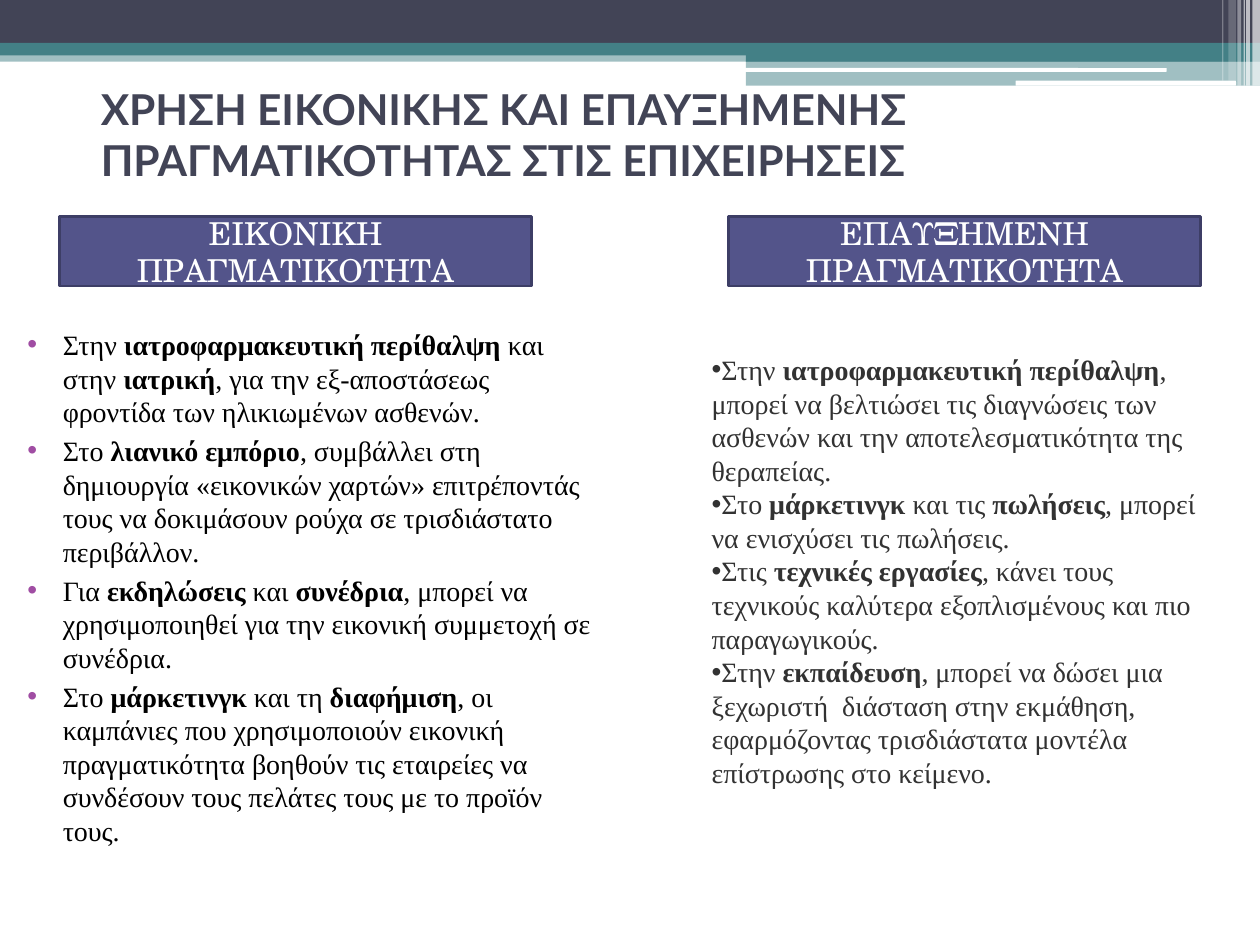
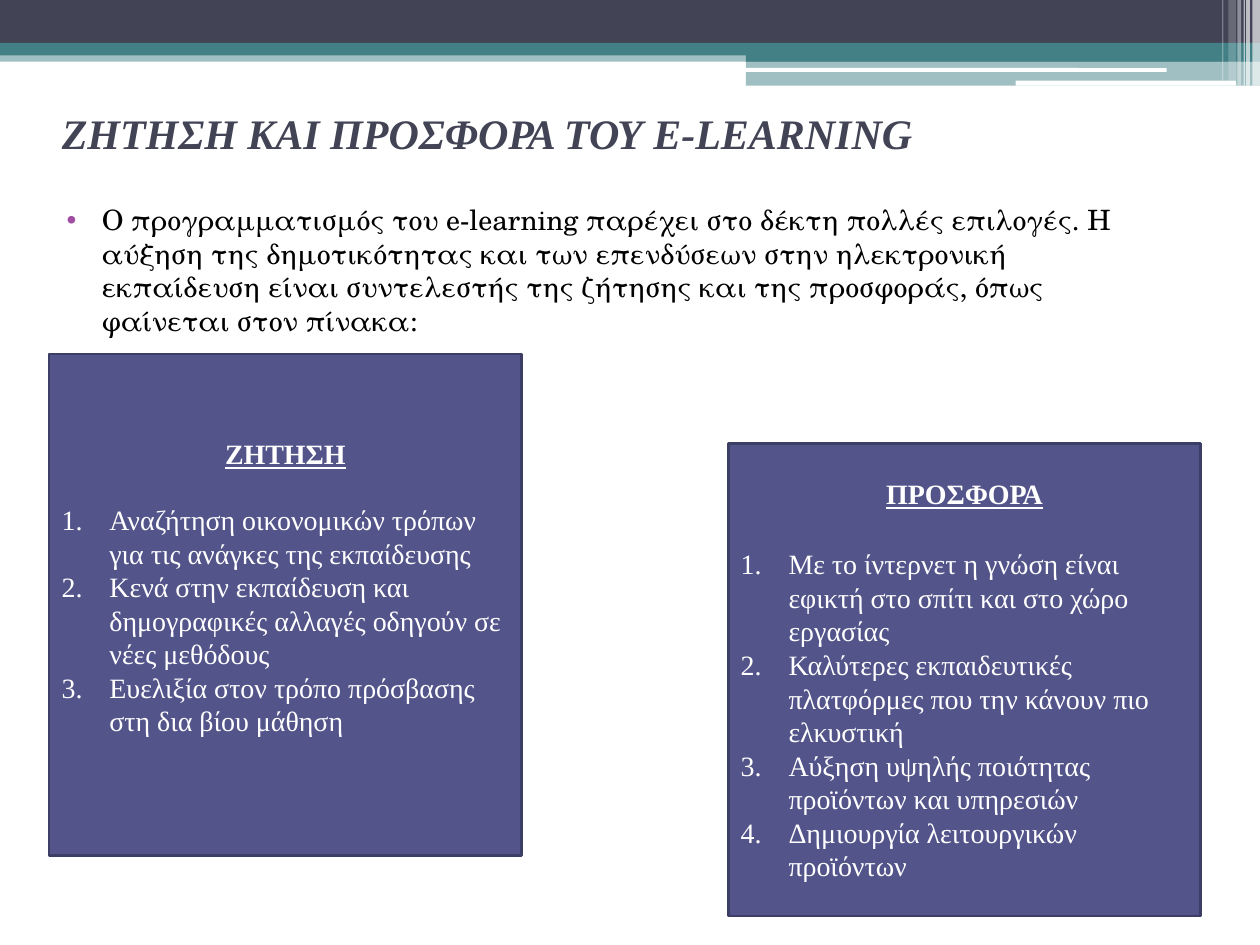
from lxml import etree
from pptx import Presentation
from pptx.dml.color import RGBColor
from pptx.enum.shapes import MSO_SHAPE
from pptx.enum.text import MSO_ANCHOR, MSO_AUTO_SIZE, PP_ALIGN
from pptx.oxml.ns import qn
from pptx.util import Inches, Pt

RECT, ROUND = MSO_SHAPE.RECTANGLE, MSO_SHAPE.ROUNDED_RECTANGLE
LEFT, CENTER = PP_ALIGN.LEFT, PP_ALIGN.CENTER
TOP, MIDDLE = MSO_ANCHOR.TOP, MSO_ANCHOR.MIDDLE

SERIF, SCHOLA, SANS = "Times New Roman", "TeX Gyre Schola", "Lato"
NAVY, TEAL, WHITE, BLACK = "424456", "438086", "FFFFFF", "000000"
PANEL, PANEL_EDGE, BULLET, GREY = "53548A", "3D3E66", "A04DA3", "323232"

# Header shared by both slides: left, top, width, height, colour, opacity %
BANDS = [
    (0, 0.4, 10, 0.09, TEAL, 50),
    (0, 0, 10, 0.34, NAVY, 100),
    (0, 0.34, 10, 0.1, TEAL, 100),
    (5.92, 0.39, 4.08, 0.1, TEAL, 100),
    (5.92, 0.48, 4.08, 0.2, TEAL, 50),
]
WHITE_RULES = [(5.91, 0.54, 3.35, 0.03), (8.06, 0.64, 1.75, 0.04)]
# Vertical stripes at the right end: left, width, height, opacity %
STRIPES = [
    (9.94, 0.06, 0.68, 65), (9.89, 0.03, 0.68, 65), (9.87, 0.01, 0.68, 60),
    (9.82, 0.03, 0.68, 40), (9.75, 0.06, 0.64, 20), (9.7, 0.01, 0.64, 30),
]

# Content: *bold*, ~ is a space that does not break
USES_TITLE = "ΧΡΗΣΗ ΕΙΚΟΝΙΚΗΣ ΚΑΙ ΕΠΑΥΞΗΜΕΝΗΣ ΠΡΑΓΜΑΤΙΚΟΤΗΤΑΣ ΣΤΙΣ ΕΠΙΧΕΙΡΗΣΕΙΣ"
USES_HEADINGS = ["ΕΙΚΟΝΙΚΗ ΠΡΑΓΜΑΤΙΚΟΤΗΤΑ", "ΕΠΑΥΞΗΜΕΝΗ ΠΡΑΓΜΑΤΙΚΟΤΗΤΑ"]
VIRTUAL_USES = [
    "Στην~*ιατροφαρμακευτική~περίθαλψη*~και στην~*ιατρική*, για την "
    "εξ-αποστάσεως φροντίδα των ηλικιωμένων ασθενών.",
    "Στο~*λιανικό~εμπόριο*, συμβάλλει στη δημιουργία «εικονικών χαρτών» "
    "επιτρέποντάς τους να δοκιμάσουν ρούχα σε τρισδιάστατο περιβάλλον.",
    "Για~*εκδηλώσεις*~και~*συνέδρια*, μπορεί να χρησιμοποιηθεί για την "
    "εικονική συμμετοχή σε συνέδρια.",
    "Στο*~μάρκετινγκ*~και τη*~διαφήμιση*, οι καμπάνιες που χρησιμοποιούν "
    "εικονική πραγματικότητα βοηθούν τις εταιρείες να συνδέσουν τους πελάτες "
    "τους με το προϊόν τους.",
]
AUGMENTED_USES = [
    "Στην *ιατροφαρμακευτική~περίθαλψη*, μπορεί να βελτιώσει τις διαγνώσεις "
    "των ασθενών και την αποτελεσματικότητα της θεραπείας.",
    "Στο*~μάρκετινγκ*~και τις*~πωλήσεις*, μπορεί να ενισχύσει τις πωλήσεις.",
    "Στις~*τεχνικές εργασίες*, κάνει τους τεχνικούς καλύτερα εξοπλισμένους "
    "και πιο παραγωγικούς.",
    "Στην*~εκπαίδευση*, μπορεί να δώσει μια ξεχωριστή  διάσταση στην "
    "εκμάθηση, εφαρμόζοντας τρισδιάστατα μοντέλα επίστρωσης στο κείμενο.",
]
MARKET_TITLE = "ΖΗΤΗΣΗ ΚΑΙ ΠΡΟΣΦΟΡΑ ΤΟΥ E-LEARNING"
MARKET_INTRO = (
    "Ο προγραμματισμός του e-learning παρέχει στο δέκτη πολλές επιλογές. Η "
    "αύξηση της δημοτικότητας και των επενδύσεων στην ηλεκτρονική εκπαίδευση "
    "είναι συντελεστής της ζήτησης και της προσφοράς, όπως φαίνεται στον πίνακα:")
# Panels: place, heading, gap after heading (points), bottom inset, numbered items
MARKET_PANELS = [
    ((0.39, 2.81, 3.75, 3.98), "ΖΗΤΗΣΗ", 18.4, 0.33, [
        "Αναζήτηση οικονομικών τρόπων για τις ανάγκες της εκπαίδευσης",
        "Κενά στην εκπαίδευση και δημογραφικές αλλαγές οδηγούν σε νέες μεθόδους",
        "Ευελιξία στον τρόπο πρόσβασης στη δια βίου μάθηση"]),
    ((5.78, 3.52, 3.75, 3.75), "ΠΡΟΣΦΟΡΑ", 20.7, 0.05, [
        "Με το ίντερνετ η γνώση είναι εφικτή στο σπίτι και στο χώρο εργασίας",
        "Καλύτερες εκπαιδευτικές πλατφόρμες που την κάνουν πιο ελκυστική",
        "Αύξηση υψηλής ποιότητας προϊόντων και υπηρεσιών",
        "Δημιουργία λειτουργικών προϊόντων"]),
]


def rgb(color):
    return RGBColor.from_string(color)


def place(box, at):
    box.left, box.top, box.width, box.height = map(Inches, at)


def block(slide, at, color, kind=RECT, opacity=100, edge=None):
    shape = slide.shapes.add_shape(kind, *map(Inches, at))
    shape.shadow.inherit = False
    shape.fill.solid()
    shape.fill.fore_color.rgb = rgb(color)
    if opacity < 100:
        fill = shape.fill._xPr.find(qn("a:solidFill"))
        etree.SubElement(fill[0], qn("a:alpha"), val=str(opacity * 1000))
    if edge:
        shape.line.color.rgb = rgb(edge)
        shape.line.width = Pt(1.5)
    else:
        shape.line.fill.background()
    return shape


def mark(paragraph, bullet=None, number=False, indent=0, bullet_color=None):
    props = paragraph._p.get_or_add_pPr()
    props.set("marL", str(Inches(indent[0]) if indent else 0))
    props.set("indent", str(Inches(indent[1]) if indent else 0))
    if bullet_color:
        color = etree.SubElement(props, qn("a:buClr"))
        etree.SubElement(color, qn("a:srgbClr"), val=bullet_color)
    if number:
        etree.SubElement(props, qn("a:buFont"), typeface="+mj-lt")
        etree.SubElement(props, qn("a:buAutoNum"), type="arabicPeriod")
    elif bullet:
        etree.SubElement(props, qn("a:buFont"), typeface="Arial")
        etree.SubElement(props, qn("a:buChar"), char=bullet)


def write(box, text, size=16, font=SERIF, color=BLACK, bold=False, italic=False,
          underline=False, align=LEFT, anchor=MIDDLE, before=0, after=0, **marks):
    """Add one paragraph to the box; *...* switches bold."""
    frame = box.text_frame
    frame.word_wrap = True
    frame.auto_size = MSO_AUTO_SIZE.NONE
    frame.vertical_anchor = anchor
    paragraph = frame.add_paragraph() if frame.text else frame.paragraphs[0]
    paragraph.alignment = align
    paragraph.space_before, paragraph.space_after = Pt(before), Pt(after)
    if marks:
        mark(paragraph, **marks)
    for position, part in enumerate(text.replace("~", "\u00a0").split("*")):
        if part:
            run = paragraph.add_run()
            run.text = part
            style = run.font
            style.name, style.size, style.color.rgb = font, Pt(size), rgb(color)
            style.bold = bold or position % 2 == 1
            style.italic, style.underline = italic, underline


def text_box(slide, at):
    return slide.shapes.add_textbox(*map(Inches, at))


def add_header(layout, slide):
    """Draw the header once and hand it to the layout, behind its placeholders."""
    parts = [block(slide, at, color, opacity=opacity)
             for *at, color, opacity in BANDS]
    parts += [block(slide, at, WHITE, ROUND) for at in WHITE_RULES]
    parts += [block(slide, (left, 0, width, height), WHITE, opacity=opacity)
              for left, width, height, opacity in STRIPES]
    for depth, part in enumerate(parts, start=2):
        layout.shapes.element.insert(depth, part.element)


def add_title(slide, text, at, **style):
    place(slide.shapes.title, at)
    write(slide.shapes.title, text, color=NAVY, bold=True, **style)


OUTLINE = dict(bullet="•", indent=(0.4, -0.28), bullet_color=BULLET,
               before=3, anchor=TOP)


def build_uses(slide):
    add_title(slide, USES_TITLE, (0.7, 0.48, 9, 1.17), size=24.3, font=SANS)
    virtual = text_box(slide, (0, 2.27, 4.84, 5.23))
    virtual.text_frame.margin_top = Inches(0.33)
    for use in VIRTUAL_USES:
        write(virtual, use, **OUTLINE)
    for left, heading in zip((0.47, 5.78), USES_HEADINGS):
        panel = block(slide, (left, 1.72, 3.75, 0.55), PANEL, edge=PANEL_EDGE)
        write(panel, heading, size=18, font=SCHOLA, color=WHITE, align=CENTER)
    augmented = text_box(slide, (5.55, 2.73, 4.06, 3.6))
    for use in AUGMENTED_USES:
        write(augmented, use, color=GREY, bullet="•")


def build_market(slide):
    add_title(slide, MARKET_TITLE, (0.39, 0.47, 9, 1.17), size=24, italic=True)
    intro = text_box(slide, (0.31, 1.56, 9, 1.13))
    write(intro, MARKET_INTRO, font=SCHOLA, **OUTLINE)
    for at, heading, gap, inset, items in MARKET_PANELS:
        panel = block(slide, at, PANEL, edge=PANEL_EDGE)
        panel.text_frame.margin_bottom = Inches(inset)
        write(panel, heading, color=WHITE, bold=True, underline=True,
              align=CENTER, after=gap)
        for item in items:
            write(panel, item, color=WHITE, number=True, indent=(0.38, -0.38))


def main():
    deck = Presentation()
    deck.slide_width, deck.slide_height = Inches(10), Inches(7.5)
    title_only = deck.slide_layouts[5]
    uses, market = [deck.slides.add_slide(title_only) for _ in range(2)]
    add_header(title_only, uses)
    build_uses(uses)
    build_market(market)
    deck.save("out.pptx")


if __name__ == "__main__":
    main()
